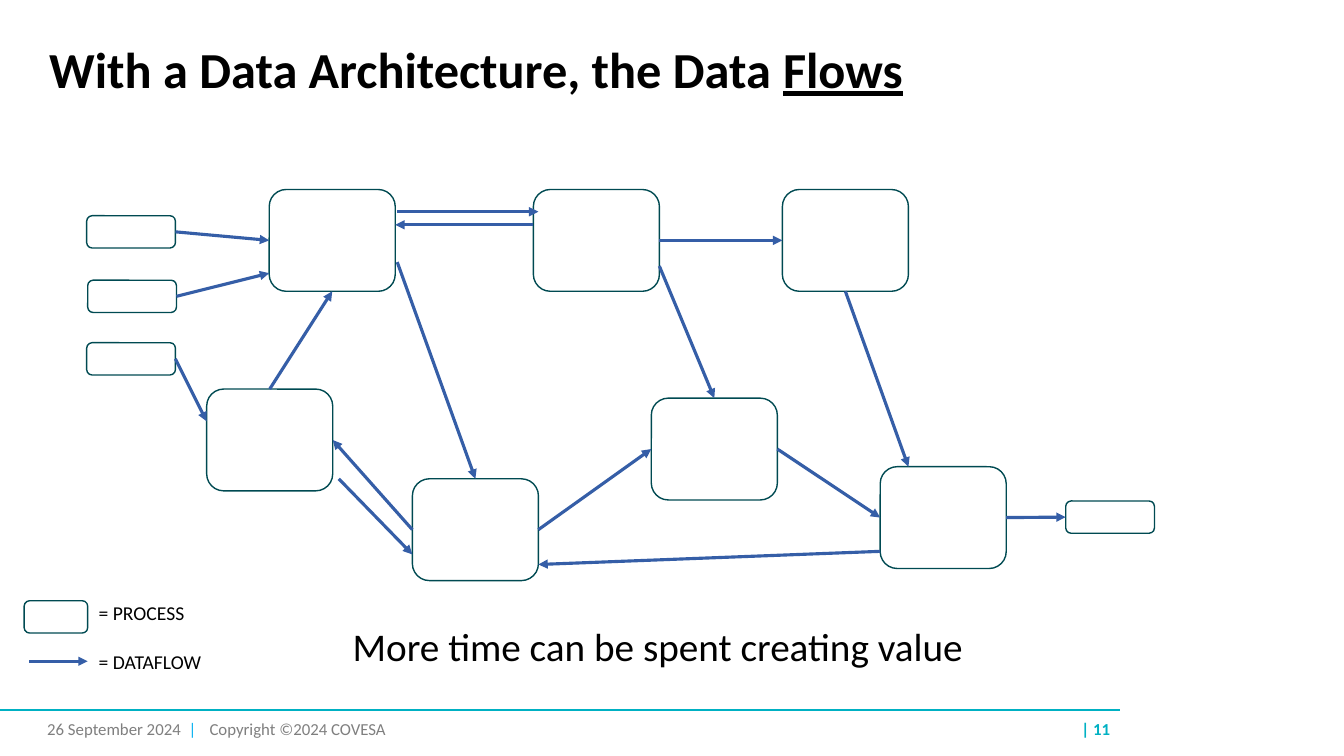
from lxml import etree
from pptx import Presentation
from pptx.dml.color import RGBColor
from pptx.enum import shapes, text
from pptx.oxml import ns
from pptx.util import Inches, Pt

BLACK = RGBColor(0x00, 0x00, 0x00)
GRAY = RGBColor(0x7F, 0x7F, 0x7F)
TEAL = RGBColor(0x00, 0xB1, 0xC3)
CYAN = RGBColor(0x00, 0xB0, 0xF0)
DARK_TEAL = RGBColor(0x00, 0x4A, 0x52)
BLUE = RGBColor(0x35, 0x5E, 0xA7)

TOP, LEFT, BOTTOM, RIGHT = range(4)
LARGE = (1.25, 1.01)
SMALL = (0.88, 0.32)
LEGEND = (0.63, 0.32)

PROCESSES = {
    "collect": (2.67, 1.88, LARGE),
    "refine": (5.29, 1.88, LARGE),
    "publish": (7.76, 1.88, LARGE),
    "prepare": (2.05, 3.86, LARGE),
    "combine": (4.09, 4.75, LARGE),
    "review": (6.46, 3.95, LARGE),
    "deliver": (8.73, 4.63, LARGE),
    "input 1": (0.86, 2.14, SMALL),
    "input 2": (0.87, 2.78, SMALL),
    "input 3": (0.86, 3.4, SMALL),
    "output": (10.57, 4.97, SMALL),
    "legend": (0.24, 5.96, LEGEND),
}

DATAFLOWS = [
    (("input 1", RIGHT), ("collect", LEFT)),
    ((3.94, 2.1), (5.34, 2.1)),
    ((5.29, 2.23), (3.92, 2.23)),
    (("prepare", TOP), ("collect", BOTTOM)),
    (("input 2", RIGHT), (2.67, 2.71)),
    (("input 3", RIGHT), (2.05, 4.18)),
    ((3.94, 2.6), ("combine", TOP)),
    (("combine", LEFT), ("prepare", RIGHT)),
    (("combine", RIGHT), ("review", LEFT)),
    ((3.36, 4.75), (4.09, 5.5)),
    (("refine", RIGHT), ("publish", LEFT)),
    ((6.54, 2.64), ("review", TOP)),
    (("review", RIGHT), ("deliver", LEFT)),
    (("publish", BOTTOM), (9.01, 4.63)),
    ((8.73, 5.47), (5.34, 5.6)),
    (("deliver", RIGHT), ("output", LEFT)),
    ((0.29, 6.56), (0.87, 6.56)),
]


def add_text(slide, box, lines, size, color=BLACK, bold=None, spacing=None,
             anchor=text.MSO_ANCHOR.TOP, align=text.PP_ALIGN.LEFT):
    """Add a text box with one paragraph per line and return its paragraphs."""
    frame = slide.shapes.add_textbox(*map(Inches, box)).text_frame
    frame.word_wrap = True
    frame.vertical_anchor = anchor
    frame.text = "\n".join(lines)
    for paragraph in frame.paragraphs:
        paragraph.alignment = align
        paragraph.line_spacing = spacing
        font = paragraph.font
        font.name, font.size, font.bold = "Calibri", Pt(size), bold
        font.color.rgb = color
    return frame.paragraphs


def add_process(slide, left, top, size):
    """Add an outlined rounded rectangle."""
    shape = slide.shapes.add_shape(
        shapes.MSO_SHAPE.ROUNDED_RECTANGLE, *map(Inches, (left, top, *size)))
    shape.shadow.inherit = False
    shape.fill.background()
    shape.line.color.rgb = DARK_TEAL
    shape.line.width = Pt(1)
    return shape


def add_line(slide, start, end, color, width):
    """Add a straight line without shadow between two points."""
    connector = slide.shapes.add_connector(
        shapes.MSO_CONNECTOR.STRAIGHT, *map(Inches, (*start, *end)))
    connector.line.color.rgb = color
    connector.line.width = Pt(width)
    etree.SubElement(connector._element.spPr, ns.qn("a:effectLst"))
    return connector


def locate(end):
    """Return the point of a flow end, given as a point or a process side."""
    if end[0] not in PROCESSES:
        return end
    name, side = end
    left, top, (width, height) = PROCESSES[name]
    across, down = [(0.5, 0), (0, 0.5), (0.5, 1), (1, 0.5)][side]
    return left + across * width, top + down * height


def add_dataflow(slide, processes, start, end):
    """Add an arrow and join it to the processes it touches."""
    arrow = add_line(slide, locate(start), locate(end), BLUE, 2.25)
    if start[0] in processes:
        arrow.begin_connect(processes[start[0]], start[1])
    if end[0] in processes:
        arrow.end_connect(processes[end[0]], end[1])
    etree.SubElement(arrow.line._get_or_add_ln(), ns.qn("a:tailEnd"), type="triangle")


def add_footer(slide):
    """Add the rule, date, copyright line and page number."""
    middle = text.MSO_ANCHOR.MIDDLE
    add_line(slide, (0, 7.04), (11.11, 7.04), TEAL, 1.5)
    add_text(slide, (8.11, 7.03, 3, 0.4), ["| 11"], 12, TEAL, bold=True,
             anchor=middle, align=text.PP_ALIGN.RIGHT)
    add_text(slide, (1.98, 7.03, 2.13, 0.4), ["Copyright ©2024 COVESA"], 12, GRAY,
             anchor=middle)
    date = add_text(slide, (0.37, 7.03, 1.76, 0.4), ["26 September 2024  "], 12, GRAY,
                    anchor=middle)[0]
    divider = date.add_run()
    divider.text = "|"
    divider.font.color.rgb = CYAN


def main():
    """Build the slide and save it."""
    presentation = Presentation()
    presentation.slide_width = Inches(13.33)
    presentation.slide_height = Inches(7.5)
    slide = presentation.slides.add_slide(presentation.slide_layouts[6])

    add_footer(slide)
    title = add_text(slide, (0.39, 0.4, 11.5, 0.68),
                     ["With a Data Architecture, the Data "], 36, bold=True, spacing=0.9)[0]
    flows = title.add_run()
    flows.text = "Flows"
    flows.font.underline = True

    processes = {name: add_process(slide, *place) for name, place in PROCESSES.items()}
    for start, end in DATAFLOWS:
        add_dataflow(slide, processes, start, end)

    legend = add_text(slide, (0.88, 5.94, 1.38, 0.68), ["= PROCESS", "= DATAFLOW"], 14,
                      spacing=0.9)
    legend[1].space_before = Pt(20)
    add_text(slide, (3.4, 6.18, 7.5, 0.62), ["More time can be spent creating value"], 28,
             spacing=0.9)
    presentation.save("out.pptx")


if __name__ == "__main__":
    main()
